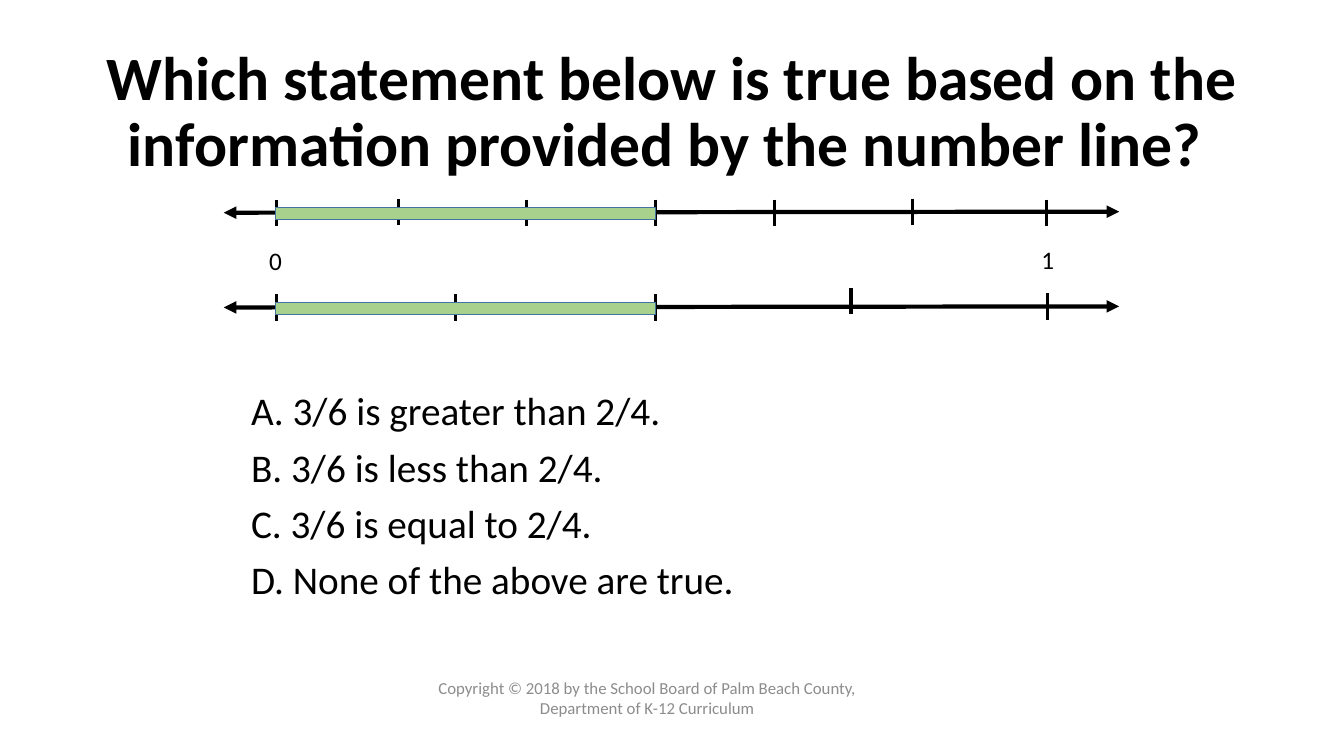
from dataclasses import dataclass

from lxml import etree
from pptx import Presentation
from pptx.dml.color import RGBColor
from pptx.enum.shapes import MSO_CONNECTOR, MSO_SHAPE
from pptx.enum.text import MSO_ANCHOR, PP_ALIGN
from pptx.oxml.ns import qn
from pptx.util import Inches, Pt

LINE, RECT = MSO_CONNECTOR.STRAIGHT, MSO_SHAPE.RECTANGLE
LEFT, CENTER = PP_ALIGN.LEFT, PP_ALIGN.CENTER
TOP, MIDDLE = MSO_ANCHOR.TOP, MSO_ANCHOR.MIDDLE


@dataclass(frozen=True)
class Theme:
    font: str = "Calibri"
    ink: RGBColor = RGBColor(0, 0, 0)
    muted: RGBColor = RGBColor(0x8C, 0x8C, 0x8C)
    bar: RGBColor = RGBColor(0xA9, 0xD1, 0x8E)
    bar_edge: RGBColor = RGBColor(0x43, 0x73, 0x9E)
    title: int = 44
    body: int = 28
    label: int = 18
    footer: int = 12


class Builder:
    def __init__(self, s, theme):
        self.s, self.theme = s, theme

    def text(self, box, lines, size, color=None, bold=False, align=LEFT,
             anchor=TOP, indent=0.1, spacing=None):
        sp = self.s.shapes.add_textbox(*map(Inches, box))
        tf = sp.text_frame
        frame = {"word_wrap": True, "vertical_anchor": anchor,
                 "margin_left": Inches(indent)}
        for name, value in frame.items():
            setattr(tf, name, value)
        font = {"name": self.theme.font, "size": Pt(size), "bold": bold}
        for i, line in enumerate(lines):
            p = tf.add_paragraph() if i else tf.paragraphs[0]
            for name, value in {"alignment": align, **(spacing or {})}.items():
                setattr(p, name, value)
            r = p.add_run()
            r.text = line
            for name, value in font.items():
                setattr(r.font, name, value)
            r.font.color.rgb = color or self.theme.ink

    def line(self, start, end, width, arrows=False):
        sp = self.s.shapes.add_connector(LINE, *map(Inches, start + end))
        sp.line.color.rgb = self.theme.ink
        sp.line.width = Pt(width)
        if arrows:
            ln = sp.line._get_or_add_ln()
            for tag in ("a:headEnd", "a:tailEnd"):
                etree.SubElement(ln, qn(tag), type="triangle")
        etree.SubElement(sp._element.spPr, qn("a:effectLst"))

    def bar(self, box):
        sp = self.s.shapes.add_shape(RECT, *map(Inches, box))
        sp.shadow.inherit = False
        sp.fill.solid()
        sp.fill.fore_color.rgb = self.theme.bar
        sp.line.color.rgb = self.theme.bar_edge
        sp.line.width = Pt(1)

    def number_line(self, y, ticks):
        self.line((2.22, y), (11.1, y - 0.01), 3, arrows=True)
        for x, top in ticks.items():
            self.line((x, top), (x, top + 0.26), 2.25)
        self.bar((2.73, y - 0.05, 3.77, 0.12))


def main():
    prs = Presentation()
    prs.slide_width, prs.slide_height = Inches(13.33), Inches(7.5)
    theme = Theme()
    b = Builder(prs.slides.add_slide(prs.slide_layouts[6]), theme)

    # Question
    b.text((0.92, 0.4, 11.5, 1.45),
           ["Which statement below is true based on the information "
            "provided by the number line? "],
           theme.title, bold=True, align=CENTER, anchor=MIDDLE,
           spacing={"line_spacing": 0.9})

    # Answers
    b.text((1.39, 3.84, 11.03, 2.92),
           ["A. 3/6 is greater than 2/4.", "B. 3/6 is less than 2/4.",
            "C. 3/6 is equal to 2/4.", "D. None of the above are true."],
           theme.body, indent=1.1,
           spacing={"line_spacing": 0.9, "space_before": Pt(10)})

    # Number lines in sixths and in quarters: tick x and tick top
    b.number_line(2.11, {2.74: 1.98, 3.95: 1.97, 5.22: 1.98, 6.5: 1.98,
                         7.68: 1.98, 9.05: 1.97, 10.38: 1.98})
    b.number_line(3.05, {2.74: 2.92, 4.52: 2.92, 6.5: 2.92,
                         8.44: 2.86, 10.39: 2.91})

    # End labels
    for label, x, y in (("0", 2.57, 2.38), ("1", 10.23, 2.37)):
        b.text((x, y, 0.3, 0.4), [label], theme.label)

    # Footer
    b.text((4.17, 6.72, 4.5, 0.4),
           ["Copyright © 2018 by the School Board of Palm Beach County, "
            "Department of K-12 Curriculum"],
           theme.footer, color=theme.muted, align=CENTER, anchor=MIDDLE)

    prs.save("out.pptx")


if __name__ == "__main__":
    main()
